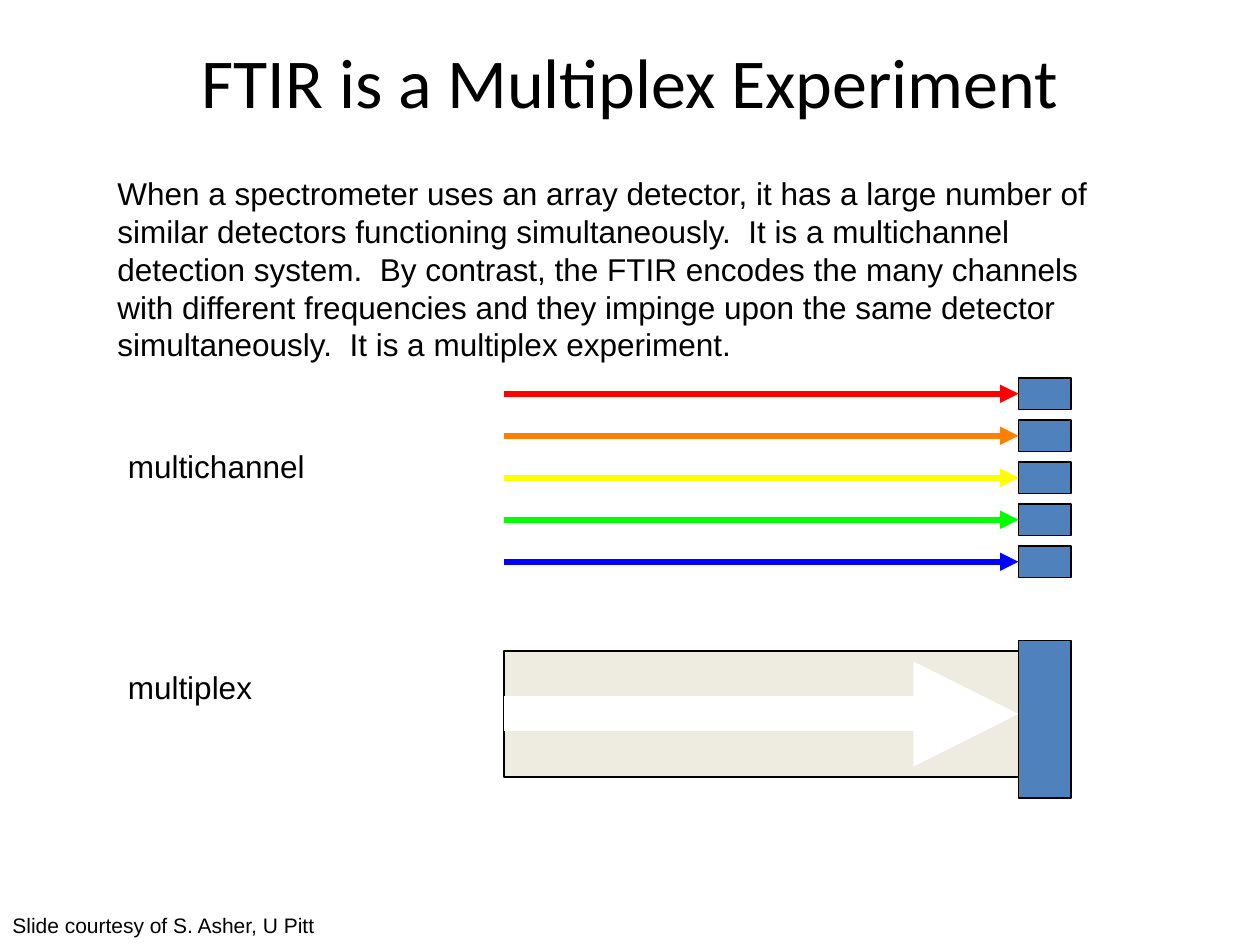
import pptx
import pptx.util
import pptx.dml.color
import pptx.enum.shapes
import pptx.enum.text
import pptx.oxml.ns
from lxml import etree

RGB = pptx.dml.color.RGBColor
ALIGN = pptx.enum.text.PP_ALIGN
ANCHOR = pptx.enum.text.MSO_ANCHOR
BLACK = RGB(0x00, 0x00, 0x00)
WHITE = RGB(0xFF, 0xFF, 0xFF)
DETECTOR = RGB(0x4F, 0x81, 0xBD)
BEAM = RGB(0xEE, 0xEC, 0xE1)
CHANNELS = [
    RGB(0xFF, 0x00, 0x00),
    RGB(0xFF, 0x80, 0x00),
    RGB(0xFF, 0xFF, 0x00),
    RGB(0x00, 0xFF, 0x00),
    RGB(0x00, 0x00, 0xFF),
]
BODY = (
    "When a spectrometer uses an array detector, it has a large number of "
    "similar detectors functioning simultaneously.  It is a multichannel "
    "detection system.  By contrast, the FTIR encodes the many channels "
    "with different frequencies and they impinge upon the same detector "
    "simultaneously.  It is a multiplex experiment."
)
DETECTOR_W = 50


def px(n):
    """120 px to the inch."""
    return pptx.util.Emu(n * 7620)


def add_text(s, box, text, size, font="Arial", align=ALIGN.LEFT, anchor=ANCHOR.TOP):
    tf = s.shapes.add_textbox(*map(px, box)).text_frame
    tf.word_wrap = True
    tf.vertical_anchor = anchor
    p = tf.paragraphs[0]
    p.text = text
    p.alignment = align
    p.font.name = font
    p.font.size = pptx.util.Pt(size)
    p.font.color.rgb = BLACK


def add_rect(s, box, fill):
    sp = s.shapes.add_shape(pptx.enum.shapes.MSO_SHAPE.RECTANGLE, *map(px, box))
    sp.shadow.inherit = False
    sp.fill.solid()
    sp.fill.fore_color.rgb = fill
    sp.line.color.rgb = BLACK
    sp.line.width = pptx.util.Pt(0.75)
    return sp


def add_ray(s, x1, x2, y, color, width):
    """Line from x1 to x2 with its arrowhead at x1."""
    line = s.shapes.add_connector(
        pptx.enum.shapes.MSO_CONNECTOR.STRAIGHT, px(x1), px(y), px(x2), px(y))
    line.line.color.rgb = color
    line.line.width = pptx.util.Pt(width)
    qn = pptx.oxml.ns.qn
    etree.SubElement(line.line._get_or_add_ln(), qn("a:headEnd"), type="triangle")
    etree.SubElement(line._element.spPr, qn("a:effectLst"))
    return line


def multichannel(s, left, top, width, height):
    """One ray and one detector for each channel."""
    cell, pitch = 30, (height - 30) // (len(CHANNELS) - 1)
    x = left + width - DETECTOR_W
    for i, color in enumerate(CHANNELS):
        y = top + i * pitch
        detector = add_rect(s, (x, y, DETECTOR_W, cell), DETECTOR)
        ray = add_ray(s, x, left, y + cell // 2, color, 3.5)
        ray.begin_connect(detector, 1)


def multiplex(s, left, top, width, height):
    """One wide beam reaching a single detector."""
    x = left + width - DETECTOR_W
    add_rect(s, (x, top, DETECTOR_W, height), DETECTOR)
    beam_top, beam_h = top + 10, 120
    beam = add_rect(s, (left, beam_top, x - left, beam_h), BEAM)
    ray = add_ray(s, x, left, beam_top + beam_h // 2, WHITE, 20)
    ray.begin_connect(beam, 3)
    ray.end_connect(beam, 1)


def main():
    prs = pptx.Presentation()
    prs.slide_width, prs.slide_height = px(1200), px(900)
    s = prs.slides.add_slide(prs.slide_layouts[6])

    # Title and explanation
    add_text(s, (60, 2, 1080, 150), "FTIR is a Multiplex Experiment", 40,
             "Calibri", ALIGN.CENTER, ANCHOR.MIDDLE)
    add_text(s, (100, 160, 1000, 192), BODY, 18)

    # Diagrams with their labels
    multichannel(s, 480, 360, 540, 190)
    multiplex(s, 480, 610, 540, 150)
    add_text(s, (110, 420, 350, 48), "multichannel", 18)
    add_text(s, (110, 630, 350, 48), "multiplex", 18)

    # Credit
    add_text(s, (0, 863, 460, 36), "Slide courtesy of S. Asher, U Pitt", 12)

    prs.save("out.pptx")


if __name__ == "__main__":
    main()
